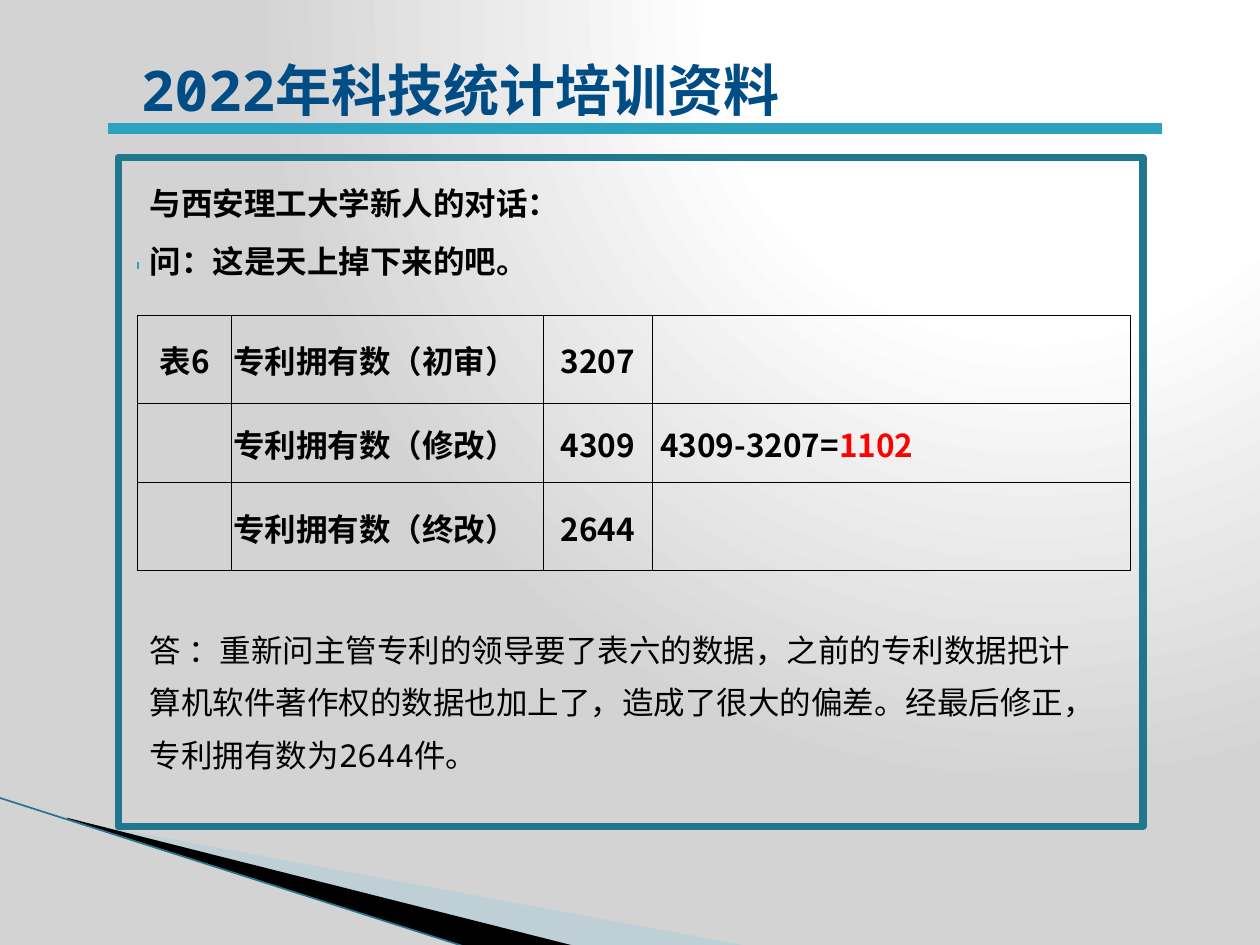
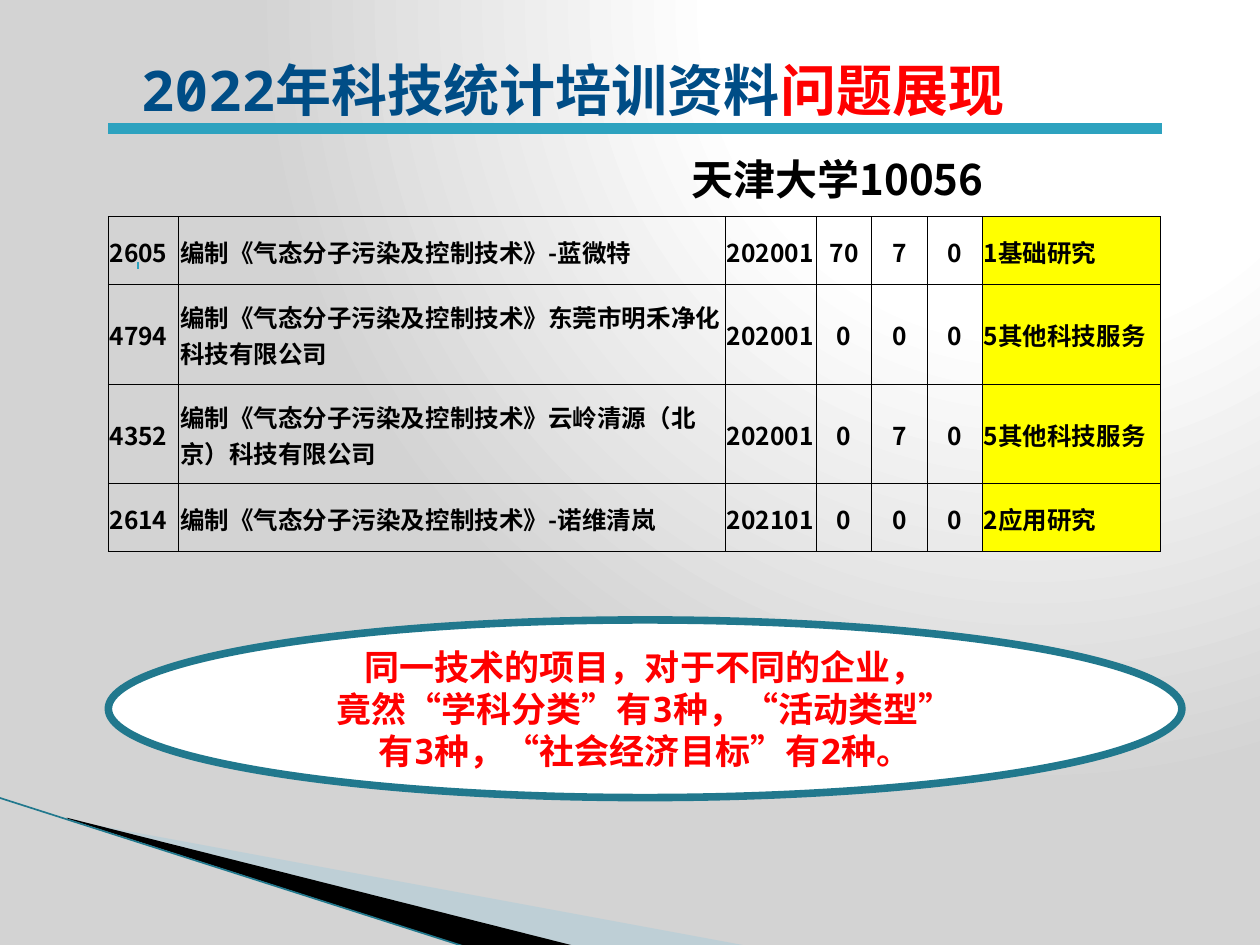
from pptx import Presentation
from pptx import util as u
from pptx.dml.color import RGBColor
from pptx.enum import shapes, text
from pptx.oxml import parse_xml
from pptx.oxml.ns import nsdecls, qn

NAVY = RGBColor(0x00, 0x4D, 0x86)
RED = RGBColor(0xFF, 0x00, 0x00)
BLACK = RGBColor(0x00, 0x00, 0x00)
WHITE = RGBColor(0xFF, 0xFF, 0xFF)
YELLOW = RGBColor(0xFF, 0xFF, 0x00)
TEAL = RGBColor(0x2D, 0xA2, 0xBF)
DEEP_TEAL = RGBColor(0x21, 0x78, 0x8D)
PALE_BLUE = RGBColor(0xA0, 0xCB, 0xDC)
SANS = "Noto Sans CJK SC"
MONO = "Noto Sans Mono"
LEFT, CENTER = text.PP_ALIGN.LEFT, text.PP_ALIGN.CENTER
MIDDLE = text.MSO_ANCHOR.MIDDLE


def write(frame, content, size=18, font=SANS, color=BLACK, bold=True,
          align=LEFT, spacing=None, accent="", wrap=True):
    """Fill a text frame, one paragraph a line; accent is a red ending."""
    frame.word_wrap = wrap
    for number, line in enumerate(content.split("\n")):
        paragraph = frame.add_paragraph() if number else frame.paragraphs[0]
        paragraph.alignment = align
        if spacing:
            paragraph.line_spacing = u.Pt(spacing)
        for words, ink in ((line, color), (accent, RED)):
            if not words:
                continue
            run = paragraph.add_run()
            run.text = words
            run.font.size, run.font.bold = u.Pt(size), bold
            run.font.color.rgb = ink
            run.font.name = font
            run.font._element.append(parse_xml(
                f'<a:ea {nsdecls("a")} typeface="{SANS}"/>'))


def add_grid(slide, left, top, widths, heights, rows, size, centered, marked=None):
    """Add a thin-ruled table; centered and marked are column numbers."""
    table = slide.shapes.add_table(
        len(rows), len(widths), u.Inches(left), u.Inches(top),
        u.Inches(sum(widths)), u.Inches(sum(heights))).table
    table.first_row = table.horz_banding = False
    for column, width in zip(table.columns, widths):
        column.width = u.Inches(width)
    for row, height, values in zip(table.rows, heights, rows):
        row.height = u.Inches(height)
        for number, (cell, value) in enumerate(zip(row.cells, values)):
            for side in ("L", "R", "T", "B"):
                cell._tc.get_or_add_tcPr().append(parse_xml(
                    f'<a:ln{side} {nsdecls("a")} w="6350"><a:solidFill>'
                    f'<a:srgbClr val="{BLACK}"/></a:solidFill></a:ln{side}>'))
            if number == marked:
                cell.fill.solid()
                cell.fill.fore_color.rgb = YELLOW
            else:
                cell.fill.background()
            cell.vertical_anchor = MIDDLE
            cell.margin_left = cell.margin_right = cell.margin_top = u.Inches(0.01)
            cell.margin_bottom = 0
            write(cell.text_frame, value, size=size,
                  align=CENTER if number in centered else LEFT)
    return table


prs = Presentation()
prs.slide_width, prs.slide_height = u.Inches(10), u.Inches(7.5)

# Shared background gradient
master = prs.slide_master
master.background.fill.gradient()
gradient = master.element.xpath(".//p:bg//a:gradFill")[0]
stops = "".join(f'<a:gs pos="{place}000"><a:srgbClr val="{shade}"/></a:gs>'
                for place, shade in ((0, "FFFFFF"), (40, "FFFFFF"), (100, "D3D3D3")))
gradient.getparent().replace(gradient, parse_xml(
    f'<a:gradFill {nsdecls("a")} rotWithShape="1"><a:gsLst>{stops}</a:gsLst>'
    '<a:path path="circle"><a:fillToRect l="65000" t="0" r="0" b="98000"/></a:path>'
    '</a:gradFill>'))

layout = prs.slide_layouts[5]
dialogue = prs.slides.add_slide(layout)
problems = prs.slides.add_slide(layout)

# Shared corner wedges and crease, kept in the layout
wedges = [
    (PALE_BLUE, 40, [(0.55, 6.51), (5.95, 7.51), (4.56, 7.51), (0.55, 6.5)]),
    (BLACK, 100, [(0.53, 6.49), (4.57, 7.51), (3.72, 7.52), (0.54, 6.5)]),
]
for color, opacity, corners in wedges:
    points = [(u.Inches(x), u.Inches(y)) for x, y in corners]
    outline = dialogue.shapes.build_freeform(*points[0])
    outline.add_line_segments(points[1:], close=True)
    wedge = outline.convert_to_shape()
    wedge.shadow.inherit = False
    wedge.fill.solid()
    wedge.fill.fore_color.rgb = color
    wedge.line.fill.background()
    if opacity < 100:
        wedge.element.spPr.find(".//" + qn("a:srgbClr")).append(
            parse_xml(f'<a:alpha {nsdecls("a")} val="{opacity}000"/>'))
    layout.shapes.element.append(wedge.element)

# Lines: the crease goes to the layout, the tick and title rule to each slide
lines = [(dialogue, True, -0.01, 6.33, 3.71, 7.52, DEEP_TEAL, 0.95)]
for slide in (dialogue, problems):
    lines += [(slide, False, 1.09, 2.11, 1.1, 2.11, TEAL, 4),
              (slide, False, 0.86, 1.02, 9.22, 1.02, TEAL, 6)]
for slide, shared, x1, y1, x2, y2, color, weight in lines:
    rule = slide.shapes.add_connector(
        shapes.MSO_CONNECTOR.STRAIGHT,
        u.Inches(x1), u.Inches(y1), u.Inches(x2), u.Inches(y2))
    rule.line.color.rgb = color
    rule.line.width = u.Pt(weight)
    rule.element.spPr.append(parse_xml(f'<a:effectLst {nsdecls("a")}/>'))
    if shared:
        layout.shapes.element.append(rule.element)

# Titles
for slide, width, ending in ((dialogue, 7.19, ""), (problems, 7.73, "问题展现")):
    title = slide.shapes.title
    title.left, title.top = u.Inches(1.02), u.Inches(0.39)
    title.width, title.height = u.Inches(width), u.Inches(0.64)
    title.text_frame.vertical_anchor = MIDDLE
    write(title.text_frame, "2022年科技统计培训资料", size=32, font=MONO,
          color=NAVY, accent=ending)

# Text boxes
passages = [
    (dialogue, 1.09, 4.84, 7.58, 1.33,
     "答 ：重新问主管专利的领导要了表六的数据，之前的专利数据把计算机软件著作权的"
     "数据也加上了，造成了很大的偏差。经最后修正，专利拥有数为2644件。",
     dict(font=MONO, bold=False, spacing=30)),
    (dialogue, 1.09, 1.41, 5.16, 0.4, "与西安理工大学新人的对话：", dict(font=MONO)),
    (dialogue, 1.09, 1.87, 3.25, 0.4, "问：这是天上掉下来的吧。", dict(wrap=False)),
    (problems, 5.39, 1.17, 3.98, 0.5, "天津大学10056", dict(size=24)),
]
for slide, left, top, width, height, content, style in passages:
    passage = slide.shapes.add_textbox(
        u.Inches(left), u.Inches(top), u.Inches(width), u.Inches(height))
    write(passage.text_frame, content, **style)

# Dialogue frame and conclusion oval
frame = dialogue.shapes.add_shape(
    shapes.MSO_SHAPE.FLOWCHART_PROCESS,
    u.Inches(0.94), u.Inches(1.25), u.Inches(8.13), u.Inches(5.31))
frame.fill.background()
conclusion = problems.shapes.add_shape(
    shapes.MSO_SHAPE.OVAL,
    u.Inches(0.86), u.Inches(4.92), u.Inches(8.52), u.Inches(1.41))
conclusion.fill.solid()
conclusion.fill.fore_color.rgb = WHITE
for outlined in (frame, conclusion):
    outlined.shadow.inherit = False
    outlined.line.color.rgb = DEEP_TEAL
    outlined.line.width = u.Pt(4.33)
conclusion.text_frame.vertical_anchor = MIDDLE
write(conclusion.text_frame,
      "同一技术的项目，对于不同的企业，\n"
      "竟然“学科分类”有3种，“活动类型”\n"
      "有3种，“社会经济目标”有2种。",
      size=20, font=MONO, color=RED, align=CENTER, spacing=24)

# Patent counts: the first two reviews, then the final one
patent_columns = [0.75, 2.47, 0.87, 3.79]
reviews = add_grid(dialogue, 1.09, 2.5, patent_columns, [0.7, 0.63], [
    ("表6", "专利拥有数（初审）", "3207", ""),
    ("", "专利拥有数（修改）", "4309", ""),
], size=18, centered=(0, 2))
difference = reviews.cell(1, 3)
difference.margin_left = u.Inches(0.06)
write(difference.text_frame, "4309-3207=", accent="1102")
add_grid(dialogue, 1.09, 3.83, patent_columns, [0.7],
         [("", "专利拥有数（终改）", "2644", "")], size=18, centered=(0, 2))

# Projects built on the same technology
book = "编制《气态分子污染及控制技术》"
add_grid(problems, 0.86, 1.72, [0.56, 4.34, 0.72, 0.44, 0.44, 0.44, 1.41],
         [0.54, 0.79, 0.79, 0.54], [
    ("2605", book + "-蓝微特", "202001", "70", "7", "0", "1基础研究"),
    ("4794", book + "东莞市明禾净化科技有限公司", "202001", "0", "0", "0", "5其他科技服务"),
    ("4352", book + "云岭清源（北京）科技有限公司", "202001", "0", "7", "0", "5其他科技服务"),
    ("2614", book + "-诺维清岚", "202101", "0", "0", "0", "2应用研究"),
], size=14, centered=(3, 4, 5), marked=6)

prs.save("out.pptx")
